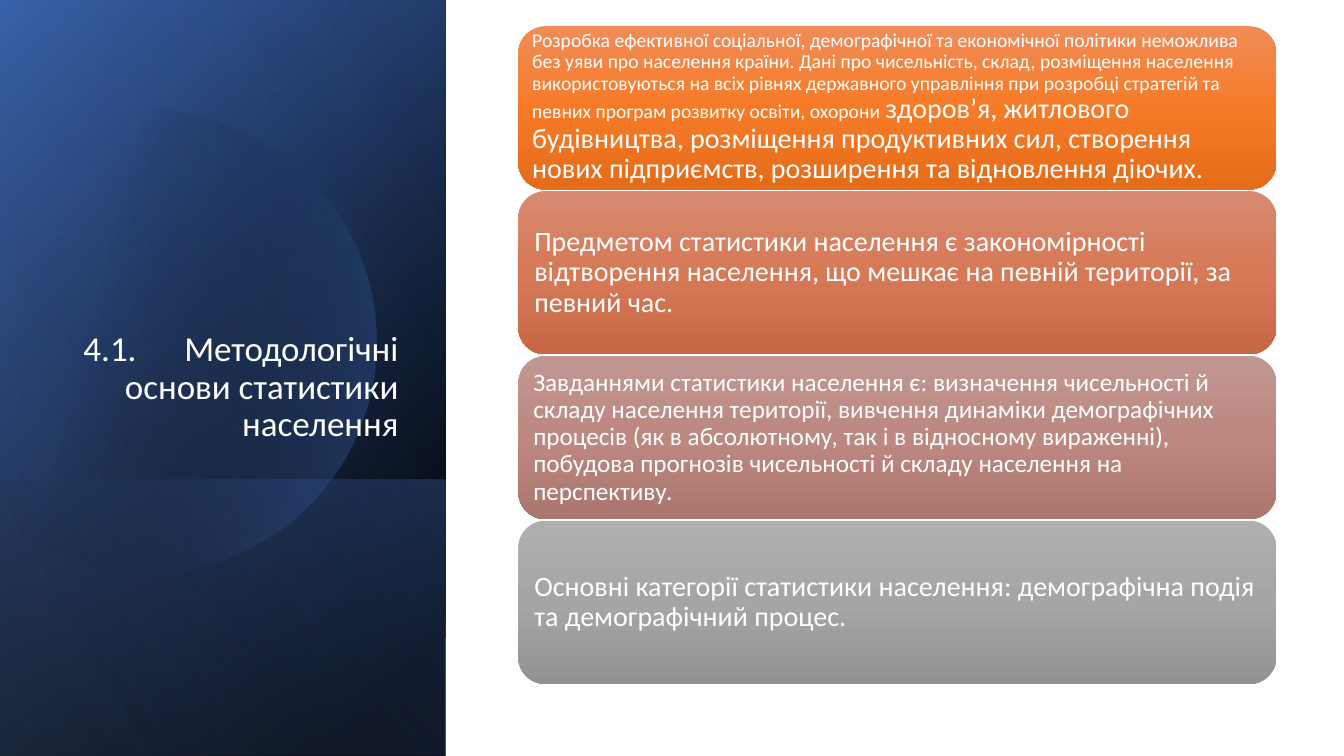
from math import acos, cos, sin

from lxml.etree import SubElement
from pptx import Presentation
from pptx.dml.color import RGBColor
from pptx.enum.shapes import MSO_SHAPE as Preset
from pptx.enum.text import MSO_ANCHOR as Anchor, PP_ALIGN as Align
from pptx.oxml.ns import qn
from pptx.util import Inches, Pt

WIDTH, HEIGHT = Inches(13.33), Inches(7.5)
PANEL = (0, 0, 33.16, 100)
BAND = (0, 63.47, 33.16, 36.53)
TITLE = (4.8, 24.53, 25.58, 34.93)
CARD_LEFT, CARD_TOP, CARD_WIDTH, CARD_HEIGHT, CARD_STEP = 38.56, 3.47, 56.41, 21.6, 21.8

WASHES = [
    (PANEL, 50, [(8, "000000", 100), (100, "2F5597", 100)]),
    (PANEL, 30, [(0, "000000", 0), (99, "4472C4", 46)]),
    (BAND, 130, [(2, "4472C4", 29), (100, "000000", 30)]),
]
DISC_STOPS = [(29, "000000", 0), (100, "4472C4", 43)]
GLOW = (PANEL, 120, [(0, "000000", 0), (99, "8FAADC", 11)])

CARDS = [
    (("F18C57", "F67B28", "E56C19"), 0.06, [
        ("Розробка ефективної соціальної, демографічної та економічної політики "
         "неможлива без уяви про населення країни. Дані про чисельність, склад, "
         "розміщення населення використовуються на всіх рівнях державного управління "
         "при розробці стратегій та певних програм розвитку освіти, охорони ", 14),
        ("здоров’я, житлового будівництва, розміщення продуктивних сил, створення "
         "нових підприємств, розширення та відновлення діючих.", 20)]),
    (("D78B72", "D77956", "C66846"), 0.08, [
        ("Предметом статистики населення є закономірності відтворення населення, "
         "що мешкає на певній території, за певний час.", 20)]),
    (("C19791", "BC8880", "AA766E"), 0.07, [
        ("Завданнями статистики населення є: визначення чисельності й складу населення "
         "території, вивчення динаміки демографічних процесів (як в абсолютному, так і "
         "в відносному вираженні), побудова прогнозів чисельності й складу населення "
         "на перспективу.", 18)]),
    (("AFAFAF", "A5A5A5", "939393"), 0.08, [
        ("Основні категорії статистики населення: демографічна подія та "
         "демографічний процес.", 20)]),
]


def color(value):
    """Turn a hex string into a colour."""
    return RGBColor.from_string(value)


def apply(target, values):
    """Set every attribute named in a dict of format values."""
    for name, value in values.items():
        setattr(target, name, value)


def place(left, top, width, height):
    """Turn percentages of the slide into lengths."""
    return [round(share * side / 100) for share, side in
            zip((left, top, width, height), (WIDTH, HEIGHT) * 2)]


def paint(shape, angle, stops):
    """Give a shape a linear gradient and no line or shadow."""
    shape.shadow.inherit = False
    shape.line.fill.background()
    shape.fill.gradient()
    gradient = shape._element.spPr.find(qn("a:gradFill"))
    for child in list(gradient):
        gradient.remove(child)
    gradient.set("rotWithShape", "1")
    stop_list = SubElement(gradient, qn("a:gsLst"))
    for position, value, opacity in stops:
        stop = SubElement(stop_list, qn("a:gs"), pos=str(position * 1000))
        tint = SubElement(stop, qn("a:srgbClr"), val=value)
        if opacity < 100:
            SubElement(tint, qn("a:alpha"), val=str(opacity * 1000))
    SubElement(gradient, qn("a:lin"), ang=str(angle * 60000), scaled="0")


def add_wash(page, area, angle, stops):
    """Cover an area with a mirrored rectangle turned by a quarter."""
    left, top, width, height = place(*area)
    shift = (width - height) // 2
    shape = page.shapes.add_shape(Preset.RECTANGLE, left + shift, top - shift, height, width)
    shape.rotation = 90
    shape._element.spPr.xfrm.set("flipH", "1")
    paint(shape, angle, stops)


def add_disc(page):
    """Draw the large disc cut off by the left edge of the slide."""
    center_x, center_y, radius = Inches(1.43), Inches(3.39), Inches(2.3)
    limit, steps = acos(-center_x / radius), 120
    angles = [limit * (2 * step / steps - 1) for step in range(steps + 1)]
    points = [(round(center_x + radius * cos(angle)), round(center_y + radius * sin(angle)))
              for angle in angles]
    builder = page.shapes.build_freeform(*points[0])
    builder.add_line_segments(points[1:], close=True)
    paint(builder.convert_to_shape(), 14, DISC_STOPS)


def write(box, spans, align, frame_values):
    """Fill a box with one paragraph of white text."""
    frame = box.text_frame
    apply(frame, {"word_wrap": True, **frame_values})
    para = frame.paragraphs[0]
    apply(para, {"alignment": align, "line_spacing": 0.9})
    for text, size in spans:
        span = para.add_run()
        span.text = text
        apply(span.font, {"name": "Calibri", "size": Pt(size)})
        span.font.color.rgb = color("FFFFFF")


def add_card(page, row, tones, inset, spans):
    """Add one rounded card in the given row."""
    area = place(CARD_LEFT, CARD_TOP + row * CARD_STEP, CARD_WIDTH, CARD_HEIGHT)
    card = page.shapes.add_shape(Preset.ROUNDED_RECTANGLE, *area)
    paint(card, 90, [(row_stop * 50, tone, 100) for row_stop, tone in enumerate(tones)])
    margins = {f"margin_{side}": Inches(inset) for side in ("left", "top", "right", "bottom")}
    write(card, spans, Align.LEFT, {"vertical_anchor": Anchor.MIDDLE, **margins})


def main():
    """Build the slide and save it."""
    deck = Presentation()
    apply(deck, {"slide_width": WIDTH, "slide_height": HEIGHT})
    page = deck.slides.add_slide(deck.slide_layouts[6])
    for wash in WASHES:
        add_wash(page, *wash)
    add_disc(page)
    add_wash(page, *GLOW)
    title = page.shapes.add_textbox(*place(*TITLE))
    write(title, [("4.1.\tМетодологічні основи статистики населення", 25)],
          Align.RIGHT, {"vertical_anchor": Anchor.BOTTOM})
    for row, card in enumerate(CARDS):
        add_card(page, row, *card)
    deck.save("out.pptx")


if __name__ == "__main__":
    main()
